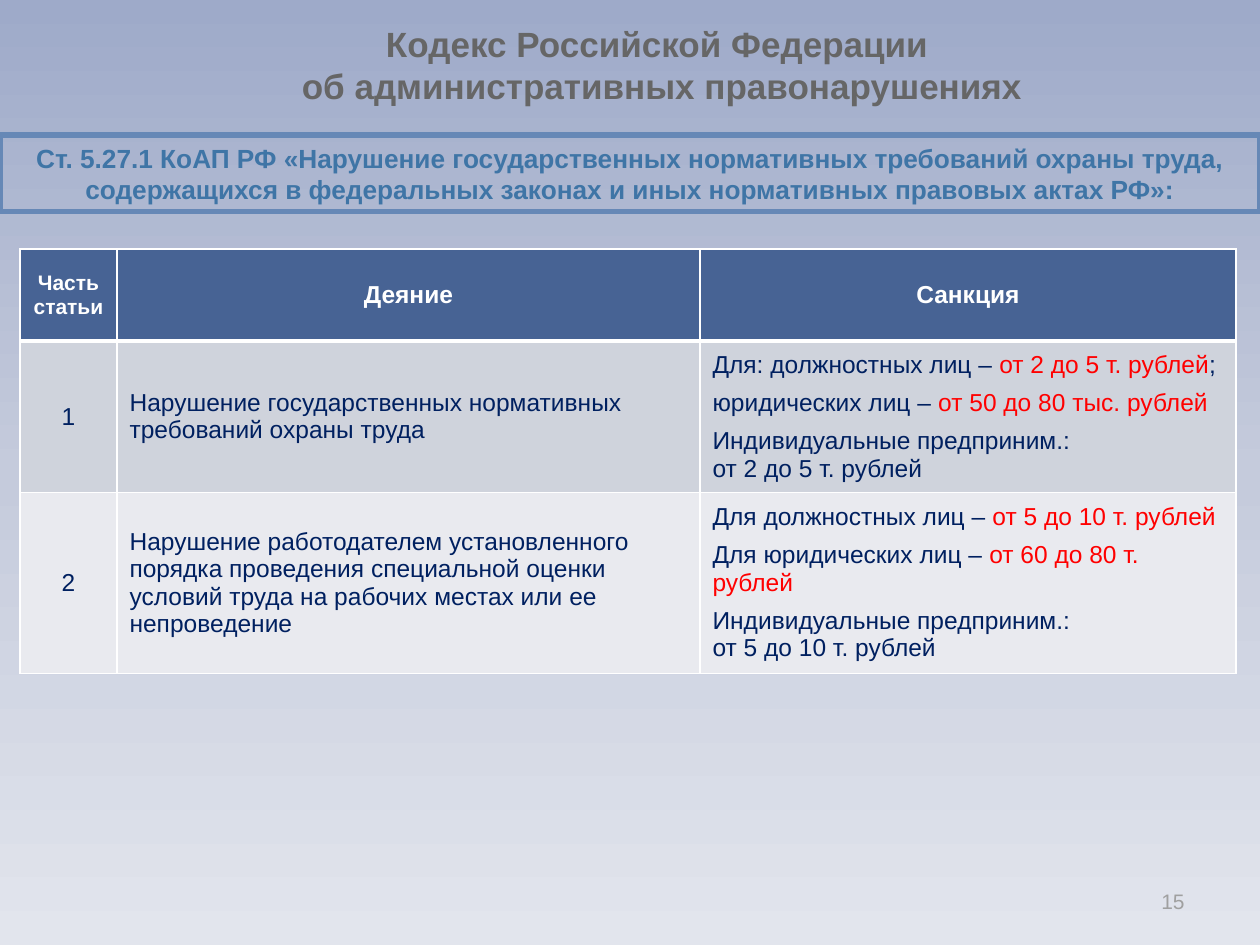
from copy import deepcopy

from lxml import etree
from pptx import Presentation
from pptx.dml.color import RGBColor
from pptx.enum.shapes import MSO_SHAPE
from pptx.enum.text import MSO_ANCHOR, PP_ALIGN
from pptx.oxml.ns import qn
from pptx.util import Emu, Pt

RECT = MSO_SHAPE.RECTANGLE
MIDDLE = MSO_ANCHOR.MIDDLE
LEFT, CENTER, RIGHT = PP_ALIGN.LEFT, PP_ALIGN.CENTER, PP_ALIGN.RIGHT
PX = 914400 / 126
COLORS = {
    "top": "9EAAC9", "mid": "C5CBDC", "bottom": "E2E5ED",
    "title": "666666", "article": "3F75A6", "frame": "6688B6",
    "head": "476394", "odd": "CFD3DC", "even": "E9EAEF",
    "white": "FFFFFF", "navy": "002060", "red": "FF0000", "number": "A0A0A0",
}
HEADERS = [("Часть статьи", 12), ("Деяние", 14), ("Санкция", 14)]
COL_WIDTHS = [97, 583, 536]
ROW_HEIGHTS = [92, 150, 181]
OFFENCES = [
    ("1", "Нарушение государственных нормативных требований охраны труда", [
        [("Для: должностных лиц – ", "navy"), ("от 2 до 5 т. рублей", "red"), (";", "navy")],
        [("юридических лиц – ", "navy"), ("от 50 до 80 тыс. рублей", "red")],
        [("Индивидуальные предприним.: \nот 2 до 5 т. рублей", "navy")],
    ]),
    ("2", "Нарушение работодателем установленного порядка проведения "
          "специальной оценки условий труда на рабочих местах или ее непроведение", [
        [("Для должностных лиц – ", "navy"), ("от 5 до 10 т. рублей", "red")],
        [("Для юридических лиц – ", "navy"), ("от 60 до 80 т. рублей", "red")],
        [("Индивидуальные предприним.: \nот 5 до 10 т. рублей", "navy")],
    ]),
]


def px(*values):
    return [Emu(round(v * PX)) for v in values]


def rgb(name):
    return RGBColor.from_string(COLORS[name])


def write(tf, paragraphs, size, bold=False, **paragraph_format):
    font_format = {"name": "Arial", "size": Pt(size), "bold": bold}
    for i, runs in enumerate(paragraphs):
        p = tf.add_paragraph() if i else tf.paragraphs[0]
        for key, value in paragraph_format.items():
            setattr(p, key, value)
        for text, color in runs:
            for j, line in enumerate(text.split("\n")):
                if j:
                    p.add_line_break()
                r = p.add_run()
                r.text = line
                for key, value in font_format.items():
                    setattr(r.font, key, value)
                r.font.color.rgb = rgb(color)


def paint_background(s):
    fill = s.background.fill
    fill.gradient()
    fill.gradient_angle = 270
    stops = s._element.find(".//" + qn("a:gsLst"))
    stops.insert(1, deepcopy(stops[0]))
    for stop, position, color in zip(fill.gradient_stops, (0, 0.5, 1), ("top", "mid", "bottom")):
        stop.position = position
        stop.color.rgb = rgb(color)


def add_text(s, box, text, color, size, bold, alignment):
    tf = s.shapes.add_textbox(*px(*box)).text_frame
    tf.word_wrap = True
    tf.vertical_anchor = MIDDLE
    write(tf, [[(text, color)]], size, bold, alignment=alignment)


def add_article(s, box):
    sp = s.shapes.add_shape(RECT, *px(*box))
    sp.shadow.inherit = False
    sp.fill.background()
    sp.line.color.rgb = rgb("frame")
    sp.line.width = Pt(3)
    text = ("Ст. 5.27.1 КоАП РФ «Нарушение государственных нормативных требований охраны труда, "
            "содержащихся в федеральных законах и иных нормативных правовых актах РФ»:")
    sp.text_frame.vertical_anchor = MIDDLE
    write(sp.text_frame, [[(text, "article")]], 15, True, alignment=CENTER)


def style_cell(cell, fill, top, bottom):
    cell.vertical_anchor = MIDDLE
    tcPr = cell._tc.get_or_add_tcPr()
    for side, width in zip("LRTB", (1, 1, top, bottom)):
        ln = etree.SubElement(tcPr, qn("a:ln" + side), w=str(Pt(width)))
        solid = etree.SubElement(ln, qn("a:solidFill"))
        etree.SubElement(solid, qn("a:srgbClr"), val=COLORS["white"])
    cell.fill.solid()
    cell.fill.fore_color.rgb = rgb(fill)


def add_offences(s, left, top):
    box = px(left, top, sum(COL_WIDTHS), sum(ROW_HEIGHTS))
    table = s.shapes.add_table(len(ROW_HEIGHTS), len(COL_WIDTHS), *box).table
    table.first_row = table.horz_banding = False
    for column, width in zip(table.columns, px(*COL_WIDTHS)):
        column.width = width
    for row, height in zip(table.rows, px(*ROW_HEIGHTS)):
        row.height = height
    borders = [("head", 1, 3), ("odd", 3, 1), ("even", 1, 1)]
    for row, style in zip(table.rows, borders):
        for cell in row.cells:
            style_cell(cell, *style)
    for cell, (text, size) in zip(table.rows[0].cells, HEADERS):
        write(cell.text_frame, [[(text, "white")]], size, True, alignment=CENTER)
    for i, (part, offence, sanctions) in enumerate(OFFENCES, 1):
        number, act, penalty = [cell.text_frame for cell in table.rows[i].cells]
        write(number, [[(part, "navy")]], 14, alignment=CENTER)
        write(act, [[(offence, "navy")]], 14, alignment=LEFT)
        write(penalty, sanctions, 14, alignment=LEFT, space_after=Pt(6))


def main():
    prs = Presentation()
    prs.slide_width, prs.slide_height = px(1260, 945)
    s = prs.slides.add_slide(prs.slide_layouts[6])
    paint_background(s)
    add_text(s, (145, -1, 1034, 130),
             "Кодекс Российской Федерации \nоб административных правонарушениях",
             "title", 20, True, CENTER)
    add_article(s, (0, 135, 1260, 77))
    add_offences(s, 20, 249)
    add_text(s, (903, 876, 294, 50), "15", "number", 12, False, RIGHT)
    prs.save("out.pptx")


if __name__ == "__main__":
    main()
